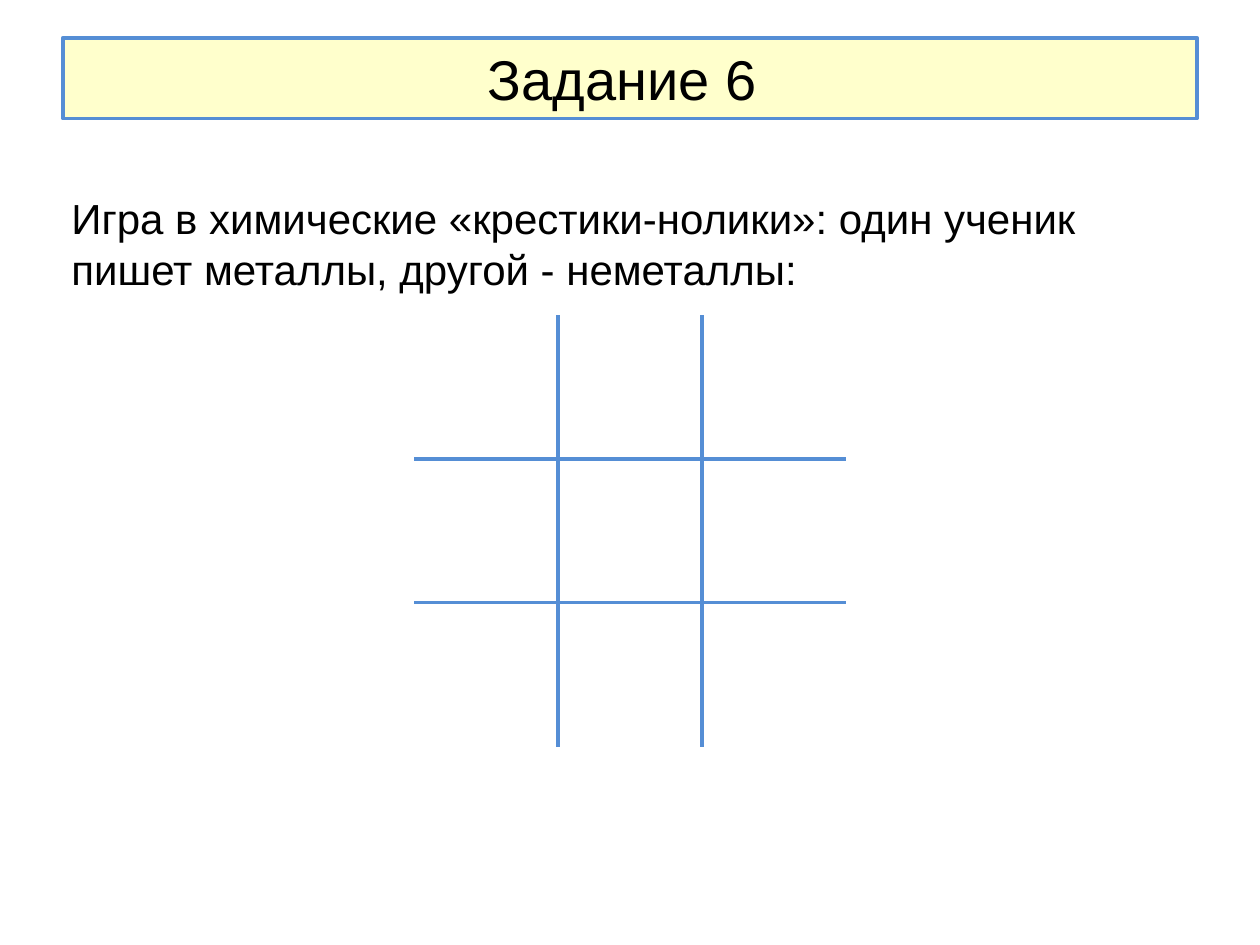
from dataclasses import dataclass

from lxml import etree
from pptx import Presentation
from pptx.dml.color import RGBColor
from pptx.enum.text import MSO_ANCHOR, PP_ALIGN
from pptx.oxml.ns import qn
from pptx.util import Cm, Pt

CENTER, LEFT = PP_ALIGN.CENTER, PP_ALIGN.LEFT
MIDDLE, TOP = MSO_ANCHOR.MIDDLE, MSO_ANCHOR.TOP
TITLE_ONLY = 5


@dataclass(frozen=True)
class Theme:
    font: str = "Arial"
    text: str = "000000"
    banner: str = "FFFFCC"
    line: str = "558ED5"
    line_width: float = 2.25
    title_size: int = 32
    body_size: int = 24


theme = Theme()


def write_text(shape, text, *, size, align=LEFT, anchor=TOP):
    frame = shape.text_frame
    frame.word_wrap = True
    frame.vertical_anchor = anchor
    paragraph = frame.paragraphs[0]
    paragraph.alignment = align
    run = paragraph.add_run()
    run.text = text
    run.font.name = theme.font
    run.font.size = Pt(size)
    run.font.color.rgb = RGBColor.from_string(theme.text)


def add_border(cell, side, visible):
    """Draw one cell side, or switch it off."""
    properties = cell._tc.get_or_add_tcPr()
    border = etree.SubElement(properties, qn(f"a:ln{side}"), w=str(Pt(theme.line_width)))
    if visible:
        fill = etree.SubElement(border, qn("a:solidFill"))
        etree.SubElement(fill, qn("a:srgbClr"), val=theme.line)
    else:
        etree.SubElement(border, qn("a:noFill"))


presentation = Presentation()
presentation.slide_width, presentation.slide_height = Cm(25.4), Cm(19.05)
slide = presentation.slides.add_slide(presentation.slide_layouts[TITLE_ONLY])

# Title banner
title = slide.shapes.title
title.left, title.top, title.width, title.height = Cm(1.27), Cm(0.76), Cm(22.86), Cm(1.63)
title.fill.solid()
title.fill.fore_color.rgb = RGBColor.from_string(theme.banner)
title.line.color.rgb = RGBColor.from_string(theme.line)
title.line.width = Pt(theme.line_width)
write_text(title, "Задание 6 ", size=theme.title_size, align=CENTER, anchor=MIDDLE)

# Rules of the game
rules = slide.shapes.add_textbox(Cm(1.19), Cm(3.76), Cm(22.86), Cm(2.69))
write_text(
    rules,
    "Игра в химические «крестики-нолики»: один ученик пишет металлы, другой - неметаллы:",
    size=theme.body_size,
)

# Noughts and crosses grid: only the inner lines show
count = 3
cell_size = Cm(2.9)
grid_size = count * cell_size
last = count - 1
grid = slide.shapes.add_table(count, count, Cm(8.35), Cm(6.35), grid_size, grid_size).table
grid.first_row = False
grid.horz_banding = False
for index in range(count):
    grid.columns[index].width = cell_size
    grid.rows[index].height = cell_size
for row in range(count):
    for column in range(count):
        cell = grid.cell(row, column)
        inner_sides = {"L": column > 0, "R": column < last, "T": row > 0, "B": row < last}
        for side, visible in inner_sides.items():
            add_border(cell, side, visible)
        cell.fill.background()

presentation.save("out.pptx")
